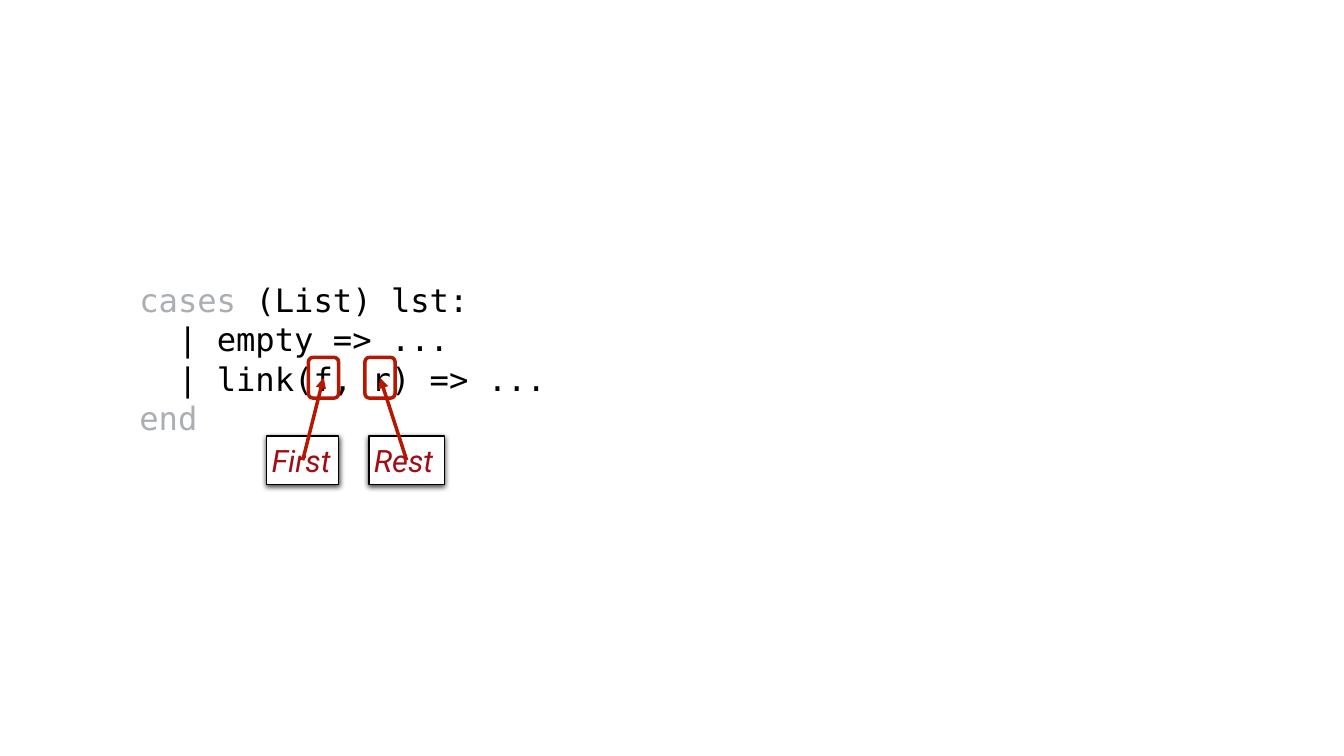
from lxml.etree import SubElement
from pptx import Presentation
from pptx.dml.color import RGBColor as RGB
from pptx.enum.shapes import MSO_CONNECTOR as CONN, MSO_SHAPE as SHAPE
from pptx.enum.text import MSO_ANCHOR as ANCHOR, MSO_AUTO_SIZE as AUTO, PP_ALIGN as ALIGN
from pptx.oxml.ns import qn
from pptx.util import Pt

BLACK = RGB(0, 0, 0)
WHITE = RGB(255, 255, 255)
GREY = RGB(0xAB, 0xAF, 0xB3)
RED = RGB(0xB5, 0x17, 0x00)
DARK_RED = RGB(0xA0, 0x0E, 0x15)

CODE_FONT = dict(name="DejaVu Sans Mono", size=Pt(46))
LABEL_FONT = dict(name="Roboto", size=Pt(44), italic=True)
CODE_BOX = (193, 20, 1229, 1040)
CODE = [
    (0, [("cases", GREY), (" (List) lst:", BLACK)]),
    (1, [("| empty => ...", BLACK)]),
    (1, [("| link(f, r) => ...", BLACK)]),
    (0, [("end", GREY)]),
]
LINE_PITCH = 56
CODE_INDENT = 55.4
NOTES = [
    ("First", (381, 623, 103, 69), (440.6, 510.5, 43.2, 58.3)),
    ("Rest", (527, 623, 108, 69), (521.3, 510.5, 43.2, 58.3)),
]


def assign(obj, values):
    """Set attributes from a dict of format values."""
    for name, value in values.items():
        setattr(obj, name, value)


def add_run(p, text, color, font):
    """Append a formatted run to a paragraph."""
    r = p.add_run()
    r.text = text
    assign(r.font, font)
    r.font.color.rgb = color


def outline(sp, color, width):
    """Give a shape or connector a solid line."""
    sp.line.color.rgb = color
    sp.line.width = Pt(width)


def add_effects(sp):
    """Append an empty effect list to a shape's properties."""
    return SubElement(sp._element.spPr, qn("a:effectLst"))


def center(box):
    """Return the middle point of a box."""
    x, y, w, h = box
    return x + w / 2, y + h / 2


def add_code(s, box):
    """Place the code listing, one paragraph per line."""
    tf = s.shapes.add_textbox(*map(Pt, box)).text_frame
    assign(tf, dict(word_wrap=True, vertical_anchor=ANCHOR.MIDDLE,
                    margin_left=Pt(6), margin_right=Pt(6),
                    margin_top=Pt(6), margin_bottom=Pt(6 + LINE_PITCH)))
    for i, (level, parts) in enumerate(CODE):
        p = tf.add_paragraph() if i else tf.paragraphs[0]
        p.line_spacing = Pt(LINE_PITCH)
        p._p.get_or_add_pPr().set("marL", str(Pt(level * CODE_INDENT)))
        for text, color in parts:
            add_run(p, text, color, CODE_FONT)


def add_label(s, text, box):
    """Place a white label with a soft shadow below it."""
    sp = s.shapes.add_shape(SHAPE.RECTANGLE, *map(Pt, box))
    sp.fill.solid()
    sp.fill.fore_color.rgb = WHITE
    outline(sp, BLACK, 2)
    shadow = SubElement(add_effects(sp), qn("a:outerShdw"), blurRad=str(Pt(8)),
                        dist=str(Pt(2)), dir="5400000", rotWithShape="0")
    color = SubElement(shadow, qn("a:srgbClr"), val=str(BLACK))
    SubElement(color, qn("a:alpha"), val="75000")
    tf = sp.text_frame
    margins = {f"margin_{side}": Pt(7.2) for side in ("left", "top", "right", "bottom")}
    assign(tf, dict(word_wrap=False, auto_size=AUTO.SHAPE_TO_FIT_TEXT,
                    vertical_anchor=ANCHOR.MIDDLE, **margins))
    p = tf.paragraphs[0]
    p.alignment = ALIGN.LEFT
    add_run(p, text, DARK_RED, LABEL_FONT)


def add_arrow(s, start, end):
    """Draw an arrow between two points."""
    sp = s.shapes.add_connector(CONN.STRAIGHT, *map(Pt, start + end))
    outline(sp, RED, 5)
    SubElement(sp.line._get_or_add_ln(), qn("a:tailEnd"), type="triangle")
    add_effects(sp)


def add_frame(s, box):
    """Draw a rounded frame around one variable."""
    sp = s.shapes.add_shape(SHAPE.ROUNDED_RECTANGLE, *map(Pt, box))
    sp.adjustments[0] = 0.155
    sp.shadow.inherit = False
    sp.fill.background()
    outline(sp, RED, 5)


def add_notes(s, notes):
    """Layer the labels, arrows and frames."""
    for text, label, _ in notes:
        add_label(s, text, label)
    for _, label, frame in notes:
        add_arrow(s, center(label), center(frame))
    for _, _, frame in notes:
        add_frame(s, frame)


def main():
    """Build and save the slide."""
    prs = Presentation()
    assign(prs, dict(slide_width=Pt(1920), slide_height=Pt(1080)))
    s = prs.slides.add_slide(prs.slide_layouts[6])
    add_code(s, CODE_BOX)
    add_notes(s, NOTES)
    prs.save("out.pptx")


if __name__ == "__main__":
    main()
